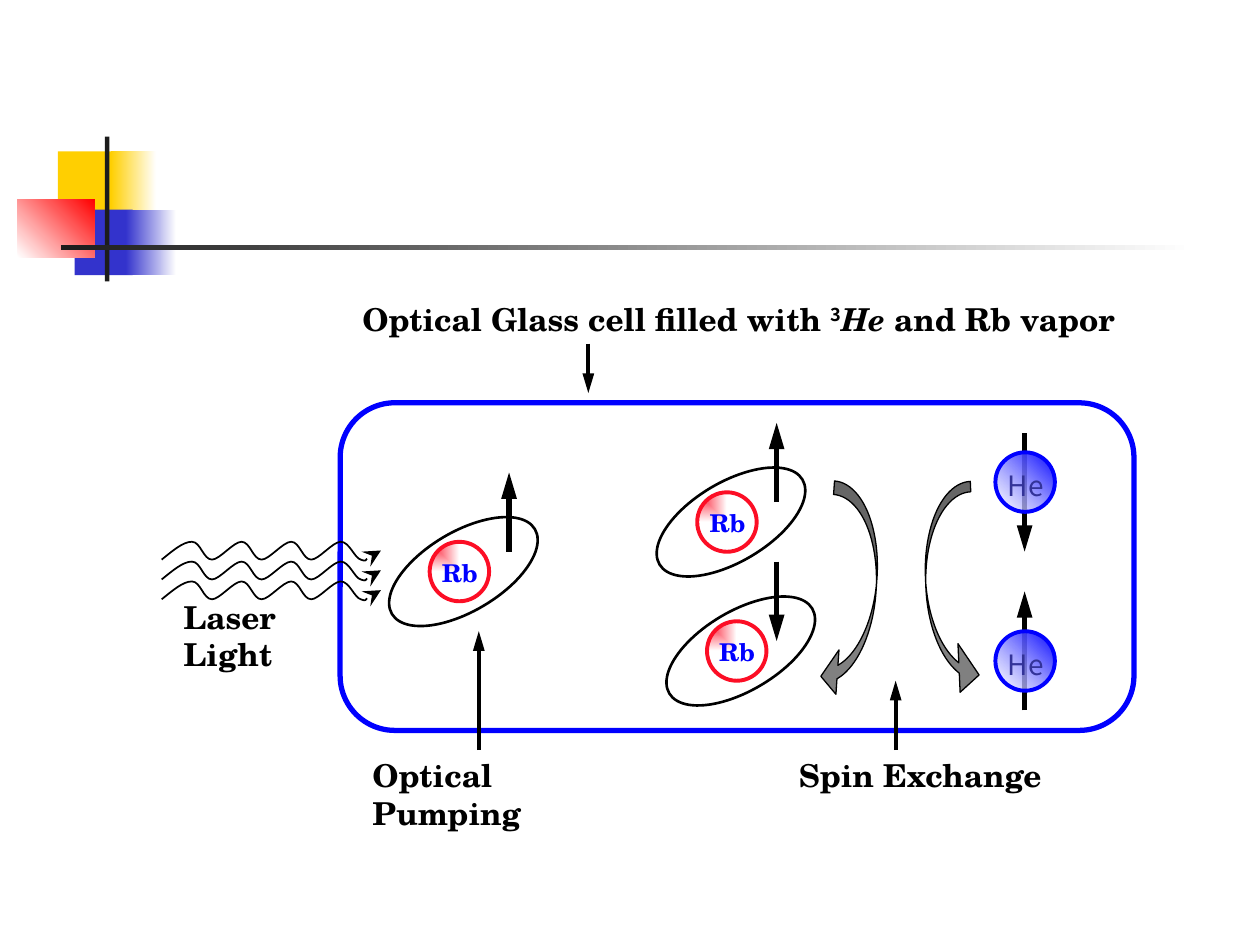
import pptx
import pptx.util
import pptx.dml.color
import pptx.enum.shapes
import pptx.enum.text
import pptx.oxml.ns
from lxml import etree

Pt = pptx.util.Pt
qn = pptx.oxml.ns.qn
SHAPE = pptx.enum.shapes.MSO_SHAPE
SERIF, SANS = "TeX Gyre Schola", "Noto Sans CJK KR"
RIGHT = pptx.enum.text.PP_ALIGN.RIGHT

# Content: left, top, width, height, colours (two make a gradient), angle
DECOR = [
    (33.1, 86.5, 34.6, 37.4, ["FFCF01"], 0),
    (63.4, 86.5, 25.9, 37.4, ["FFCF01", "FFFFFF"], 0),
    (42.7, 119.8, 33.1, 37.4, ["3333CC"], 0),
    (72, 119.8, 28.8, 37.4, ["3333CC", "FFFFFF"], 0),
    (10.1, 113.8, 43.9, 33.1, ["FFFFFF", "FF0000"], 45),
    (60, 78, 2.5, 82.8, ["1C1C1C"], 0),
    (34.6, 140.2, 648, 2.5, ["1C1C1C", "FFFFFF"], 0),
]
# Atoms: left, top, spin arrow (x, from y, to y), then label side for Rb
RUBIDIUM = [
    (245.5, 309.6, (290.9, 315.4, 270), None),
    (398.4, 281.3, (443.8, 287, 241.7), None),
    (404, 355, (443.8, 321, 366.3), RIGHT),
]
HELIUM = [
    (568.8, 360.7, (585.5, 406, 338)),
    (568.8, 258.5, (585.5, 247.5, 315.2)),
]
EXCHANGE = [
    (SHAPE.CURVED_LEFT_ARROW, 472.5, 4, (0.276, 0.905, 0.331)),
    (SHAPE.CURVED_RIGHT_ARROW, 529.2, -2.6, (0.211, 0.99, 0.4)),
]
POINTERS = [(511.8, 428.6, 389), (273.6, 428.6, 360.7), (336.2, 196.4, 224.6)]
LABELS = [
    (449.4, 428.4, 158.4, 28.8, ["Spin Exchange"]),
    (205.8, 428.4, 169.9, 28.8, ["Optical Pumping"]),
    (200, 167.8, 447.8, 28.8,
     ["Optical Glass cell filled with ", ("3", dict(font=SANS, base=30)),
      ("He", dict(italic=True)), " and Rb vapor"]),
    (97.9, 338, 67.7, 50.4, ["Laser Light"]),
]
ATOM = 34
WAVE_LEFT, WAVE_TOP, WAVE_STEP = 92.4, 309.6, 11.34
CREST, PERIOD, TROUGH = 17.3, 28.35, 10.2

prs = pptx.Presentation()
prs.slide_width, prs.slide_height = Pt(720), Pt(540)
s = prs.slides.add_slide(prs.slide_layouts[6])


def rgb(value):
    return pptx.dml.color.RGBColor.from_string(value)


def sub(parent, tag, **attrs):
    return etree.SubElement(parent, qn(tag), attrs)


def paint(sp, colors=(), line=None, width=1, angle=0):
    sp.shadow.inherit = False
    if len(colors) == 2:
        sp.fill.gradient()
        sp.fill.gradient_angle = angle
        for stop, color in zip(sp.fill.gradient_stops, colors):
            stop.color.rgb = rgb(color)
    elif colors:
        sp.fill.solid()
        sp.fill.fore_color.rgb = rgb(colors[0])
    else:
        sp.fill.background()
    if line:
        sp.line.color.rgb = rgb(line)
        sp.line.width = Pt(width)
    else:
        sp.line.fill.background()


def add_shape(kind, x, y, w, h, rotation=0, **look):
    sp = s.shapes.add_shape(kind, Pt(x), Pt(y), Pt(w), Pt(h))
    sp.rotation = rotation
    paint(sp, **look)
    return sp


def add_head(sp, kind, width):
    sub(sp.line._get_or_add_ln(), "a:tailEnd", type=kind, w=width, len="lg")


def arrow(x, y1, y2, width):
    c = s.shapes.add_connector(pptx.enum.shapes.MSO_CONNECTOR.STRAIGHT,
                               Pt(x), Pt(y1), Pt(x), Pt(y2))
    c.line.color.rgb = rgb("000000")
    c.line.width = Pt(width)
    add_head(c, "triangle", "med")
    sub(c._element.spPr, "a:effectLst")


def add_run(p, text, size=18, font=SERIF, color="000000", bold=True,
            italic=False, base=0):
    r = p.add_run()
    r.text = text
    f = r.font
    f.size, f.name, f.bold, f.italic = Pt(size), font, bold, italic
    f.color.rgb = rgb(color)
    if base:
        r._r.get_or_add_rPr().set("baseline", str(base * 1000))


def add_text(x, y, w, h, parts, align=None, **style):
    tf = s.shapes.add_textbox(Pt(x), Pt(y), Pt(w), Pt(h)).text_frame
    tf.word_wrap = True
    tf.auto_size = pptx.enum.text.MSO_AUTO_SIZE.SHAPE_TO_FIT_TEXT
    p = tf.paragraphs[0]
    p.alignment = align
    for part in parts:
        text, extra = (part, {}) if isinstance(part, str) else part
        add_run(p, text, **{**style, **extra})


def wave_points():
    """Start, then two handles and an end for each curve of the wave."""
    points = [(0, TROUGH), (6.5, 5), (12.2, 0), (CREST, 0)]
    for i in range(3):
        x = CREST + i * PERIOD
        points += [(x + 5, 0), (x + 6.5, TROUGH), (x + 11.5, TROUGH),
                   (x + 15.8, TROUGH), (x + 23.8, 0), (x + PERIOD, 0)]
    return points + [(107.3, 0), (110.2, 9.4), (113.8, TROUGH),
                     (117.4, 11.5), (121, 5.8), (125.3, 5)]


def add_curve(points):
    """Freeform whose line segments are joined by threes into curves."""
    points = [(Pt(x), Pt(y)) for x, y in points]
    builder = s.shapes.build_freeform(*points[0])
    builder.add_line_segments(points[1:], close=False)
    sp = builder.convert_to_shape()
    lines = list(sp._element.iter(qn("a:lnTo")))
    for i in range(0, len(lines), 3):
        curve = sub(lines[i].getparent(), "a:cubicBezTo")
        for line in lines[i:i + 3]:
            curve.append(line[0])
            line.getparent().remove(line)
    return sp


# Corner squares and rules
for x, y, w, h, colors, angle in DECOR:
    add_shape(SHAPE.RECTANGLE, x, y, w, h, colors=colors, angle=angle)

# Glass cell
add_shape(SHAPE.FLOWCHART_ALTERNATE_PROCESS, 194.4, 230.2, 453.6, 187.2,
          colors=["FFFFFF"], line="0000FF", width=3)

# Rubidium atoms, shaded from the top left corner, with orbit and spin
for x, y, spin, align in RUBIDIUM:
    sp = add_shape(SHAPE.OVAL, x, y, ATOM, ATOM, colors=["FC0E25", "FFFFFF"],
                   line="FC0E25", width=2.25)
    grad = sp._element.spPr.find(qn("a:gradFill"))
    grad.remove(grad.find(qn("a:lin")))
    sub(sub(grad, "a:path", path="rect"), "a:fillToRect", r="100000", b="100000")
    add_text(x - 28 if align else x, y + 5.6, 62.6, 23.8, ["Rb"], align,
             size=14, color="0000FF")
    add_shape(SHAPE.OVAL, x - 28.2, y - 5.7, 95, 45.4, rotation=329.3,
              line="000000", width=1.5)
    arrow(*spin, 3)

# Helium atoms, translucent over their spin arrows
for x, y, spin in HELIUM:
    arrow(*spin, 3)
    sp = add_shape(SHAPE.OVAL, x, y, ATOM, ATOM, colors=["FFFFFF", "0000FF"],
                   angle=45, line="0000FF", width=2.25)
    sub(next(sp._element.spPr.iter(qn("a:srgbClr"))), "a:alpha", val="68000")
    add_text(x, y + 5.7, 45.4, 26.6, ["He"], size=16, font=SANS,
             color="333399", bold=False)

# Spin exchange arrows
for kind, x, rotation, adjustments in EXCHANGE:
    sp = add_shape(kind, x, 275.7, 28.1, 124.6, rotation=rotation,
                   colors=["808080"], line="000000", width=0.75)
    for i, value in enumerate(adjustments):
        sp.adjustments[i] = value

# Labels and their pointers
for pointer in POINTERS:
    arrow(*pointer, 2.25)
for x, y, w, h, parts in LABELS:
    add_text(x, y, w, h, parts)

# Laser light
for i in range(3):
    sp = add_curve([(WAVE_LEFT + x, WAVE_TOP + i * WAVE_STEP + y)
                    for x, y in wave_points()])
    paint(sp, line="000000", width=1)
    add_head(sp, "stealth", "lg")

prs.save("out.pptx")
